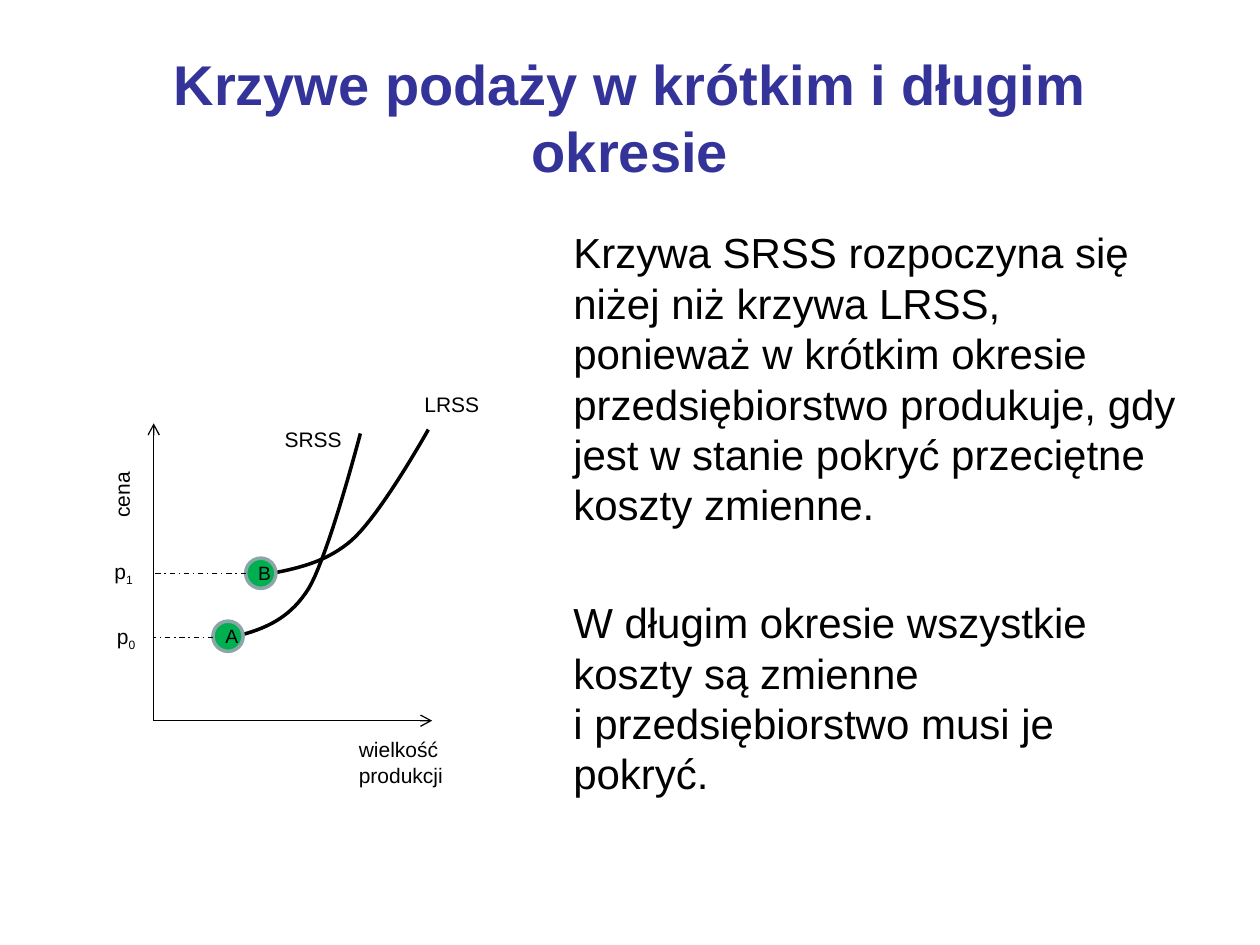
from pptx import Presentation
from pptx.dml.color import RGBColor
from pptx.enum.dml import MSO_LINE
from pptx.enum.shapes import MSO_CONNECTOR, MSO_SHAPE
from pptx.enum.text import MSO_ANCHOR, MSO_AUTO_SIZE, PP_ALIGN
from pptx.oxml.ns import qn
from pptx.util import Inches, Pt
from lxml import etree

BLUE = RGBColor(0x33, 0x33, 0x99)
BLACK = RGBColor(0, 0, 0)
GREEN = RGBColor(0x00, 0xB0, 0x50)
GREY = RGBColor(0x8A, 0xA6, 0xA8)
STRAIGHT = MSO_CONNECTOR.STRAIGHT
OVAL = MSO_SHAPE.OVAL
DASH_DOT = MSO_LINE.DASH_DOT
MIDDLE = MSO_ANCHOR.MIDDLE
NO_FIT = MSO_AUTO_SIZE.NONE
CENTER, LEFT = PP_ALIGN.CENTER, PP_ALIGN.LEFT

AXIS_X, AXIS_Y = 1.22, 5.72
DOT = 0.24
STEPS = 20
SRSS = [[(1.84, 5.06), (2.06, 5), (2.28, 4.94), (2.45, 4.67)],
        [(2.45, 4.67), (2.61, 4.4), (2.86, 3.44), (2.86, 3.44)]]
LRSS = [[(2.06, 4.57), (2.32, 4.52), (2.57, 4.48), (2.79, 4.29)],
        [(2.79, 4.29), (3.02, 4.09), (3.4, 3.41), (3.4, 3.41)]]


def add_run(p, text, size, color=BLACK, bold=False):
    """Append a formatted run to a paragraph."""
    r = p.add_run()
    r.text = text
    r.font.name = "Arial"
    r.font.size = Pt(size)
    r.font.bold = bold
    r.font.color.rgb = color
    return r


def place(sp, x, y, w, h):
    """Set the frame of a shape in inches."""
    sp.left, sp.top, sp.width, sp.height = map(Inches, (x, y, w, h))


def fill_title(sp, text):
    """Write the slide title."""
    place(sp, 0.5, 0.3, 9, 1.25)
    tf = sp.text_frame
    tf.auto_size = NO_FIT
    tf.vertical_anchor = MIDDLE
    p = tf.paragraphs[0]
    p.alignment = CENTER
    add_run(p, text, 32, BLUE, True)


def fill_body(sp, paragraphs):
    """Write unbulleted body paragraphs, each a list of lines."""
    place(sp, 4.45, 1.75, 5.05, 4.95)
    tf = sp.text_frame
    tf.auto_size = NO_FIT
    for i, lines in enumerate(paragraphs):
        p = tf.add_paragraph() if i else tf.paragraphs[0]
        pPr = p._p.get_or_add_pPr()
        pPr.set("marL", "0")
        pPr.set("indent", "0")
        etree.SubElement(pPr, qn("a:buNone"))
        p.alignment = LEFT
        p.space_before = Pt(38.6 if i else 0)
        for j, line in enumerate(lines):
            if j:
                p.add_line_break()
            add_run(p, line, 24)


def add_line(slide, start, end, dash=None, arrow=False):
    """Draw a thin straight line, optionally dashed or with an arrowhead."""
    cn = slide.shapes.add_connector(STRAIGHT, *map(Inches, start + end))
    cn.line.color.rgb = BLACK
    cn.line.width = Pt(0.75)
    if dash:
        cn.line.dash_style = dash
    if arrow:
        etree.SubElement(cn.line._get_or_add_ln(), qn("a:tailEnd"), type="arrow")
    etree.SubElement(cn._element.spPr, qn("a:effectLst"))


def bezier(points, t):
    """Return the point at t on a cubic curve, in EMU."""
    weights = ((1 - t) ** 3, 3 * t * (1 - t) ** 2, 3 * t ** 2 * (1 - t), t ** 3)
    return tuple(Inches(sum(w * c for w, c in zip(weights, axis)))
                 for axis in zip(*points))


def add_curve(slide, segments):
    """Draw a supply curve from joined cubic segments."""
    builder = slide.shapes.build_freeform(*bezier(segments[0], 0))
    builder.add_line_segments([bezier(seg, k / STEPS) for seg in segments
                               for k in range(1, STEPS + 1)], close=False)
    sp = builder.convert_to_shape()
    sp.shadow.inherit = False
    sp.fill.background()
    sp.line.color.rgb = BLACK
    sp.line.width = Pt(2)


def add_label(slide, x, y, w, text, sub="", h=0.3, rotation=0):
    """Add a small label with an optional subscript."""
    sp = slide.shapes.add_textbox(*map(Inches, (x, y, w, h)))
    sp.rotation = rotation
    sp.text_frame.word_wrap = True
    p = sp.text_frame.paragraphs[0]
    add_run(p, text, 12)
    if sub:
        r = add_run(p, sub, 12)
        r.font._element.set("baseline", "-25000")


def add_dot(slide, x, y, letter):
    """Add a lettered starting point of a curve."""
    sp = slide.shapes.add_shape(OVAL, *map(Inches, (x, y, DOT, DOT)))
    sp.shadow.inherit = False
    sp.fill.solid()
    sp.fill.fore_color.rgb = GREEN
    sp.line.color.rgb = GREY
    sp.line.width = Pt(2)
    tf = sp.text_frame
    tf.word_wrap = False
    tf.vertical_anchor = MIDDLE
    tf.margin_left = Inches(0.06)
    tf.margin_right = tf.margin_top = tf.margin_bottom = 0
    p = tf.paragraphs[0]
    p.alignment = CENTER
    add_run(p, letter, 11)


def main():
    """Build the slide on supply curves."""
    prs = Presentation()
    prs.slide_width, prs.slide_height = Inches(10), Inches(7.5)
    slide = prs.slides.add_slide(prs.slide_layouts[1])
    fill_title(slide.shapes.title, "Krzywe podaży w krótkim i długim okresie")
    fill_body(slide.placeholders[1], [
        ["Krzywa SRSS rozpoczyna się niżej niż krzywa LRSS, ponieważ w krótkim "
         "okresie przedsiębiorstwo produkuje, gdy jest w stanie pokryć "
         "przeciętne koszty zmienne."],
        ["W długim okresie wszystkie koszty są zmienne",
         "i przedsiębiorstwo musi je pokryć."]])

    for end in ((AXIS_X, 3.36), (3.43, AXIS_Y)):
        add_line(slide, (AXIS_X, AXIS_Y), end, arrow=True)
    for segments in (SRSS, LRSS):
        add_curve(slide, segments)
    for x, y, letter, price in ((1.69, 4.93, "A", 5.06), (1.95, 4.43, "B", 4.55)):
        add_dot(slide, x, y, letter)
        add_line(slide, (x, price), (AXIS_X, price), dash=DASH_DOT)

    add_label(slide, 2.16, 3.34, 0.81, "SRSS")
    add_label(slide, 3.27, 3.06, 0.71, "LRSS")
    add_label(slide, 0.81, 4.38, 0.39, "p", "1")
    add_label(slide, 0.83, 4.9, 0.39, "p", "0")
    add_label(slide, 2.75, 5.8, 0.87, "wielkość produkcji", h=0.51)
    add_label(slide, 0.55, 3.64, 0.83, "cena", rotation=270)
    prs.save("out.pptx")


if __name__ == "__main__":
    main()
